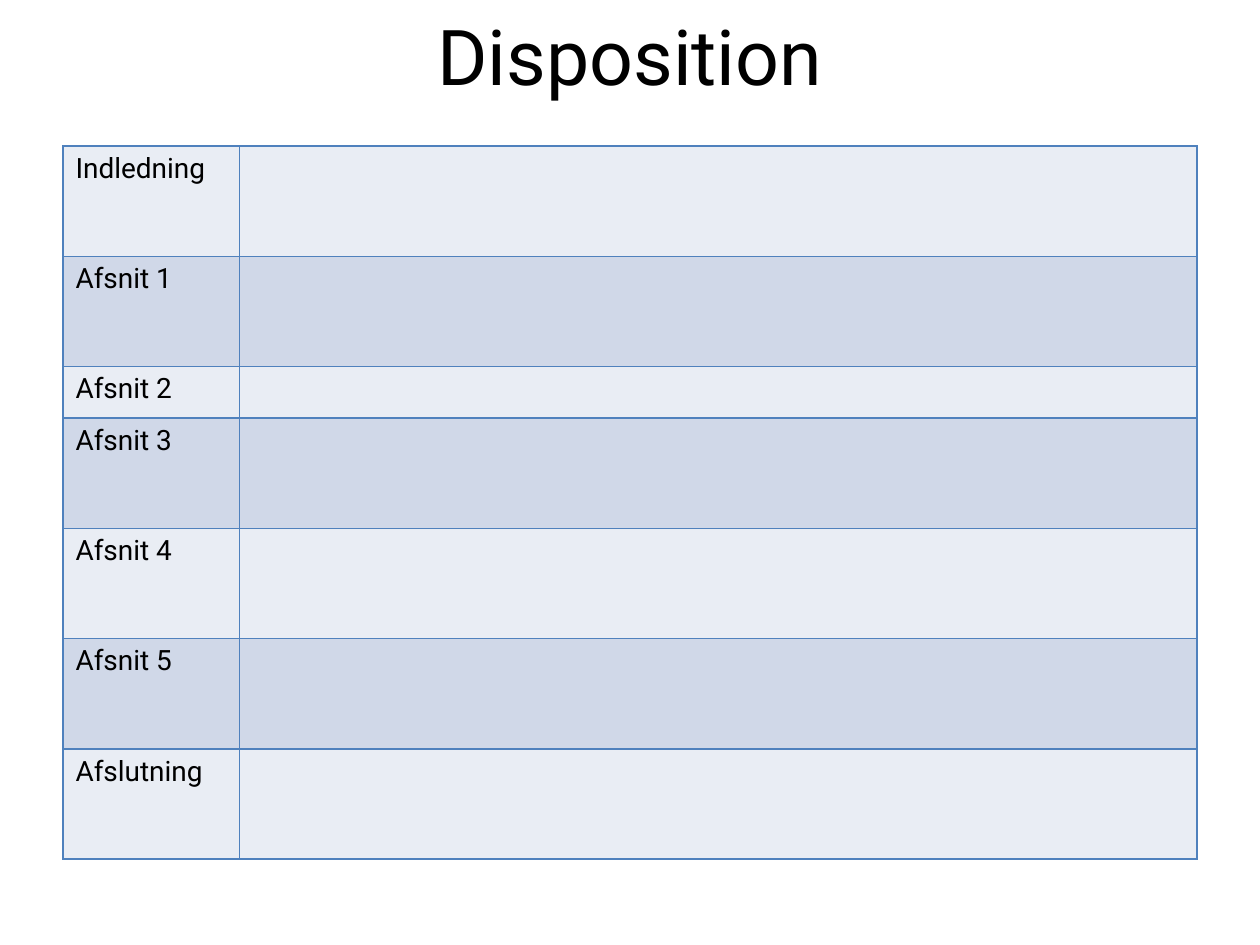
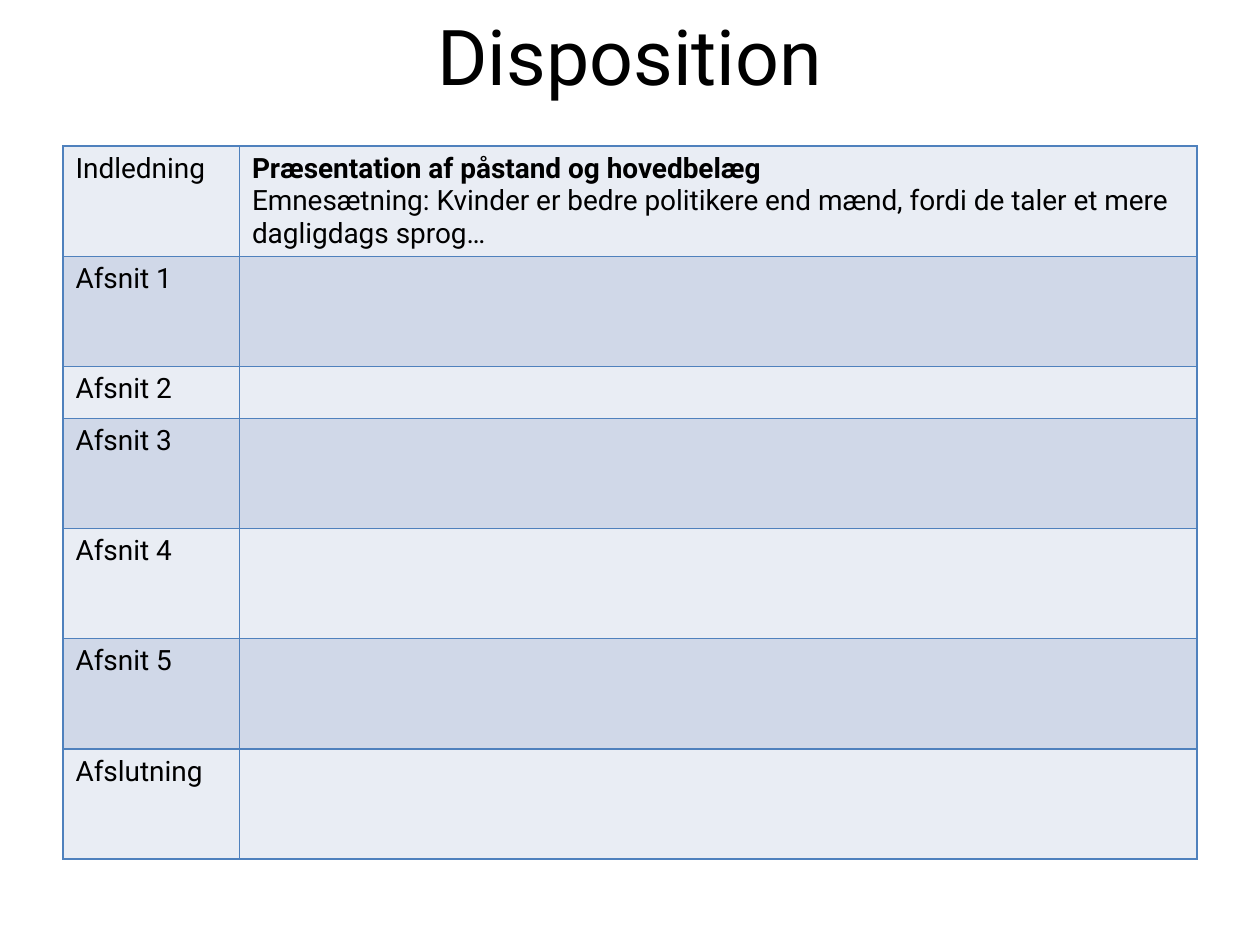
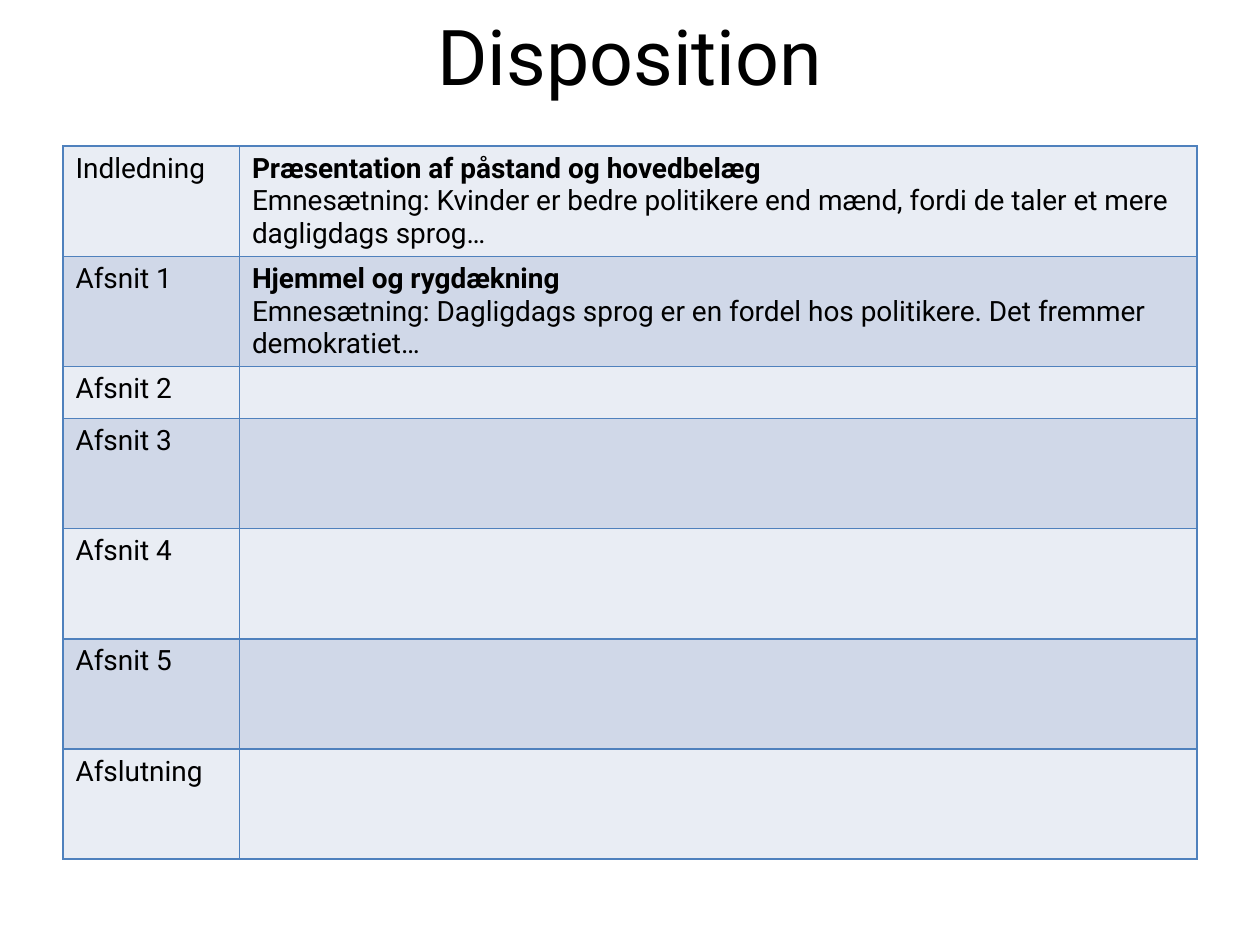
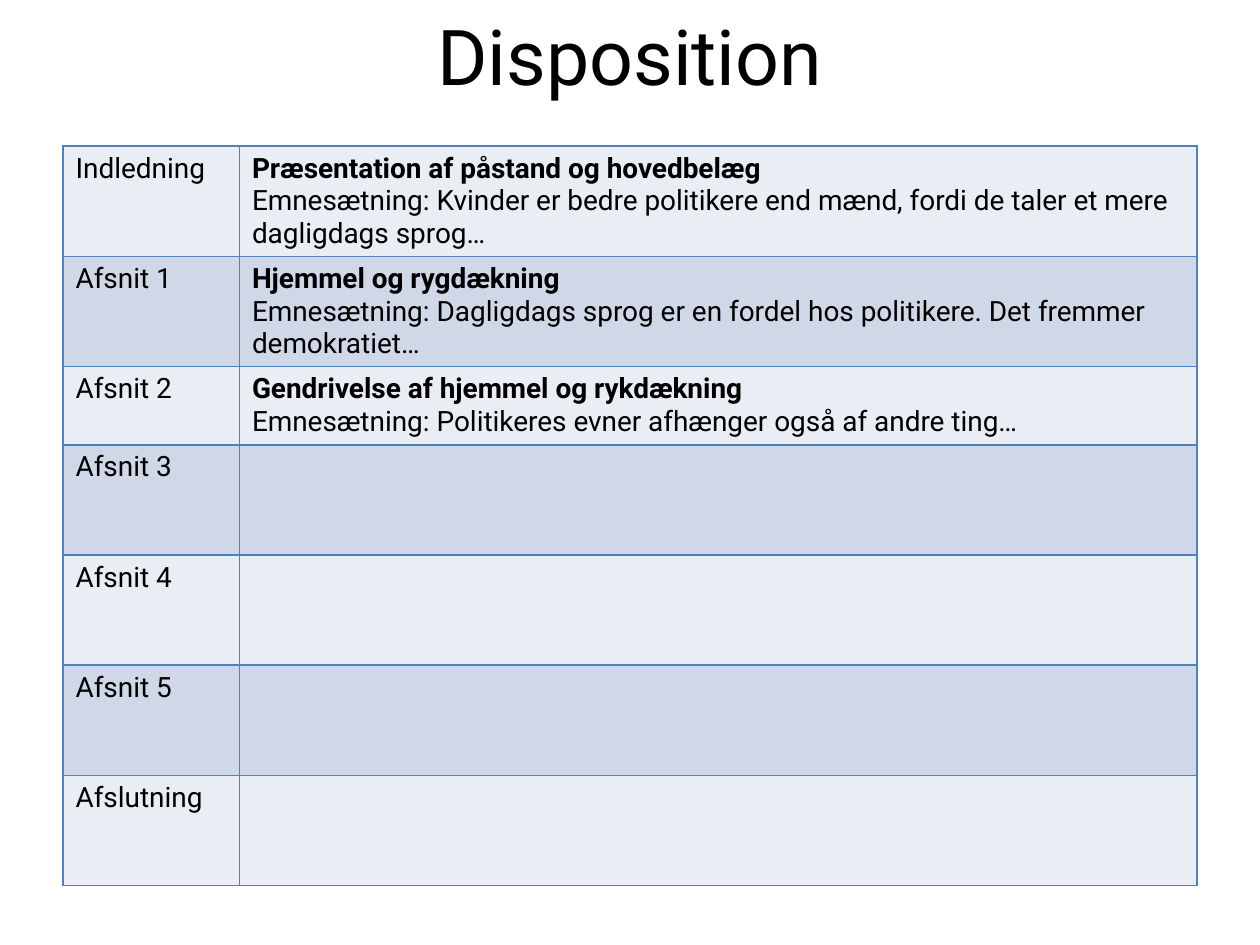
from lxml.etree import SubElement
from pptx import Presentation
from pptx.dml.color import RGBColor
from pptx.enum.text import MSO_ANCHOR, PP_ALIGN
from pptx.oxml.ns import qn
from pptx.util import Inches, Pt

COLORS = {
    "text": "000000",
    "border": "4F81BD",
    "light": "E9EDF4",
    "dark": "D0D8E8",
}
FONT = "Roboto"
TITLE = "Disposition"
SECTIONS = ["Indledning", "Afsnit 1", "Afsnit 2", "Afsnit 3", "Afsnit 4", "Afsnit 5", "Afslutning"]
COLUMN_WIDTHS = [1.4, 7.6]
ROW_HEIGHT = 7 / 8
EMPTY_SHORT_HEIGHT = 0.41
FILLED_SHORT_HEIGHT = 0.62
SHORT_SECTION = "Afsnit 2"
ARGUMENTS = [
    ("Præsentation af påstand og hovedbelæg",
     "Emnesætning: Kvinder er bedre politikere end mænd, fordi de taler et mere dagligdags sprog…"),
    ("Hjemmel og rygdækning",
     "Emnesætning: Dagligdags sprog er en fordel hos politikere. Det fremmer demokratiet…"),
    ("Gendrivelse af hjemmel og rykdækning",
     "Emnesætning: Politikeres evner afhænger også af andre ting…"),
]


def write_text(para, text, size=16, bold=False, align=PP_ALIGN.LEFT):
    para.alignment = align
    span = para.add_run()
    span.text = text
    span.font.name = FONT
    span.font.size = Pt(size)
    span.font.bold = bold
    span.font.color.rgb = RGBColor.from_string(COLORS["text"])


class OutlineDeck:
    def __init__(self):
        self.deck = Presentation()
        self.deck.slide_width = Inches(10)
        self.deck.slide_height = Inches(7.5)
        self.page = None

    def add_page(self, title):
        self.page = self.deck.slides.add_slide(self.deck.slide_layouts[5])
        box = self.page.shapes.title
        box.left, box.top = Inches(0.5), Inches(0)
        box.width, box.height = Inches(9), Inches(0.87)
        box.text_frame.vertical_anchor = MSO_ANCHOR.MIDDLE
        write_text(box.text_frame.paragraphs[0], title, size=44, align=PP_ALIGN.CENTER)

    def style_cell(self, cell, fill):
        properties = cell._tc.get_or_add_tcPr()
        for side in ("L", "R", "T", "B"):
            line = SubElement(properties, qn(f"a:ln{side}"), w=str(Pt(1)))
            paint = SubElement(line, qn("a:solidFill"))
            SubElement(paint, qn("a:srgbClr"), val=COLORS["border"])
        cell.fill.solid()
        cell.fill.fore_color.rgb = RGBColor.from_string(COLORS[fill])

    def add_outline(self, arguments):
        frame = self.page.shapes.add_table(
            len(SECTIONS), len(COLUMN_WIDTHS), Inches(0.5), Inches(1.16), Inches(9), Inches(5.65))
        table = frame.table
        table.first_row = False
        for column, width in zip(table.columns, COLUMN_WIDTHS):
            column.width = Inches(width)
        for index, section in enumerate(SECTIONS):
            argument = arguments[index] if index < len(arguments) else None
            height = ROW_HEIGHT
            if section == SHORT_SECTION:
                height = FILLED_SHORT_HEIGHT if argument else EMPTY_SHORT_HEIGHT
            table.rows[index].height = Inches(height)
            label, content = table.rows[index].cells
            for cell in (label, content):
                self.style_cell(cell, "dark" if index % 2 else "light")
            write_text(label.text_frame.paragraphs[0], section)
            if argument:
                heading, sentence = argument
                write_text(content.text_frame.paragraphs[0], heading, bold=True)
                write_text(content.text_frame.add_paragraph(), sentence)


def main():
    outline = OutlineDeck()
    for count in range(len(ARGUMENTS) + 1):
        outline.add_page(TITLE)
        outline.add_outline(ARGUMENTS[:count])
    outline.deck.save("out.pptx")


if __name__ == "__main__":
    main()
